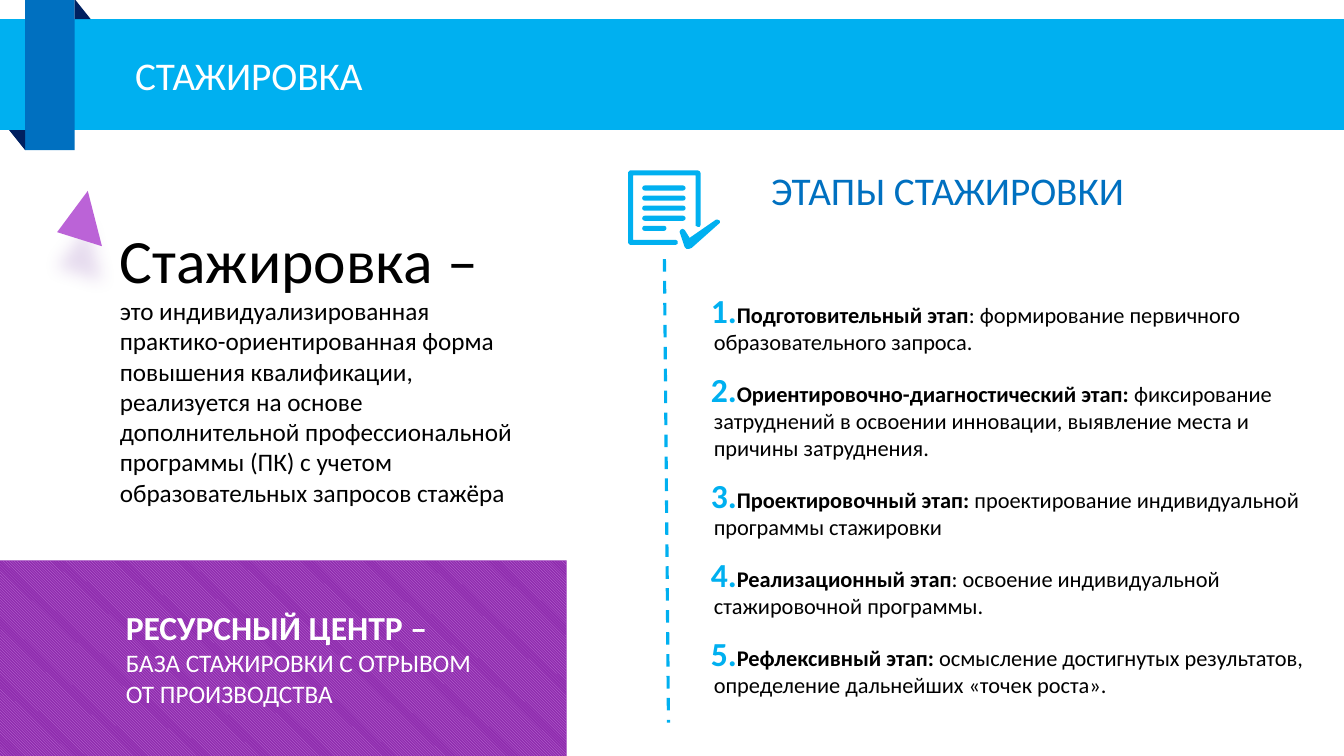
import pptx
import pptx.util
import pptx.dml.color
import pptx.enum.dml
import pptx.enum.shapes
import pptx.enum.text
import pptx.oxml
import pptx.oxml.ns
from pptx.util import Inches

SHAPE = pptx.enum.shapes.MSO_SHAPE
ANCHOR = pptx.enum.text.MSO_ANCHOR
AUTO = pptx.enum.text.MSO_AUTO_SIZE
NS = pptx.oxml.ns.nsdecls("a")

SKY, BLUE, NAVY = "00B0F0", "0070C0", "002060"
WHITE, BLACK = "FFFFFF", "000000"


def rgb(value):
    return pptx.dml.color.RGBColor.from_string(value)


def xml(text):
    return pptx.oxml.parse_xml(text)


def add_text(p, text, size=18, color=BLACK, bold=False, font="Calibri"):
    r = p.add_run()
    r.text = text
    r.font.name, r.font.size, r.font.bold = font, pptx.util.Pt(size), bold
    r.font.color.rgb = rgb(color)
    return r


class Slide:
    """Current slide and its drawing style."""

    def __init__(self, prs, layout):
        self.s = prs.slides.add_slide(prs.slide_layouts[layout])

    def paint(self, sp, fill):
        sp.shadow.inherit = False
        sp.fill.solid()
        sp.fill.fore_color.rgb = rgb(fill)
        sp.line.fill.background()
        return sp

    def shape(self, kind, x, y, w, h, fill, rot=0, adj=None):
        sp = self.s.shapes.add_shape(kind, Inches(x), Inches(y), Inches(w), Inches(h))
        sp.rotation = rot
        if adj is not None:
            sp.adjustments[0] = adj
        return self.paint(sp, fill)

    def outline(self, points, fill):
        pts = [(Inches(x), Inches(y)) for x, y in points]
        fb = self.s.shapes.build_freeform(*pts[0], scale=1.0)
        fb.add_line_segments(pts[1:], close=True)
        return self.paint(fb.convert_to_shape(), fill)

    def frame(self, sp, anchor, auto):
        tf = sp.text_frame
        tf.word_wrap, tf.vertical_anchor, tf.auto_size = True, anchor, auto
        return tf

    def text(self, x, y, w, h, lines, anchor=ANCHOR.TOP, auto=AUTO.SHAPE_TO_FIT_TEXT):
        sp = self.s.shapes.add_textbox(Inches(x), Inches(y), Inches(w), Inches(h))
        tf = self.frame(sp, anchor, auto)
        for i, (text, style) in enumerate(lines):
            p = tf.paragraphs[0] if i == 0 else tf.add_paragraph()
            add_text(p, text, **style)

    def placeholder(self, sp, x, y, w, h, anchor):
        sp.left, sp.top, sp.width, sp.height = map(Inches, (x, y, w, h))
        self.s.shapes.element.append(sp.element)  # bring to front
        return self.frame(sp, anchor, AUTO.NONE)

    def title(self, text, x, y, w, h):
        tf = self.placeholder(self.s.shapes.title, x, y, w, h, ANCHOR.MIDDLE)
        tf.margin_left = tf.margin_right = tf.margin_top = tf.margin_bottom = Inches(0.1)
        p = tf.paragraphs[0]
        p.alignment = pptx.enum.text.PP_ALIGN.LEFT
        pPr = p._p.get_or_add_pPr()
        pPr.set("marL", str(Inches(0.5)))
        pPr.set("indent", "0")
        add_text(p, text, size=28, color=WHITE)

    def numbered(self, items, x, y, w, h):
        tf = self.placeholder(self.s.placeholders[1], x, y, w, h, ANCHOR.TOP)
        for i, (name, details) in enumerate(items):
            p = tf.paragraphs[0] if i == 0 else tf.add_paragraph()
            pPr = p._p.get_or_add_pPr()
            pPr.set("marL", str(Inches(0.03)))
            pPr.set("indent", str(Inches(-0.38)))
            for bullet in (f'<a:buClr {NS}><a:srgbClr val="{SKY}"/></a:buClr>',
                           f'<a:buSzPct {NS} val="150000"/>',
                           f'<a:buFont {NS} typeface="+mj-lt"/>',
                           f'<a:buAutoNum {NS} type="arabicPeriod"/>'):
                pPr.append(xml(bullet))
            p.space_before = pptx.util.Pt(18 if i else 0)
            add_text(p, name, size=16, bold=True)
            add_text(p, details, size=16)

    def dashed(self, x1, y1, x2, y2, color, width):
        c = self.s.shapes.add_connector(pptx.enum.shapes.MSO_CONNECTOR.STRAIGHT,
                                        Inches(x1), Inches(y1), Inches(x2), Inches(y2))
        c.line.color.rgb = rgb(color)
        c.line.width = pptx.util.Pt(width)
        c.line.dash_style = pptx.enum.dml.MSO_LINE.DASH
        c._element.spPr.append(xml(f"<a:effectLst {NS}/>"))


def main():
    prs = pptx.Presentation()
    prs.slide_width, prs.slide_height = Inches(13.33), Inches(7.5)
    s = Slide(prs, 1)

    # Stages list
    s.numbered([
        ("Подготовительный этап", ": формирование первичного образовательного запроса."),
        ("Ориентировочно-диагностический этап: ",
         "фиксирование затруднений в освоении инновации, выявление места и причины затруднения."),
        ("Проектировочный этап: ", "проектирование индивидуальной программы стажировки"),
        ("Реализационный этап", ": освоение индивидуальной стажировочной программы."),
        ("Рефлексивный этап: ",
         "осмысление достигнутых результатов, определение дальнейших «точек роста»."),
    ], 6.95, 2.94, 6.32, 4.07)
    s.text(7.55, 1.6, 5.71, 0.57, [("ЭТАПЫ СТАЖИРОВКИ", dict(size=28, color=BLUE))])

    # Definition
    s.text(1.09, 2.15, 4.22, 2.96, [
        ("Стажировка –", dict(size=44)),
        ("это индивидуализированная практико-ориентированная форма повышения "
         "квалификации, реализуется на основе дополнительной профессиональной "
         "программы (ПК) с учетом образовательных запросов стажёра", {}),
    ])

    # Header band with folded ribbon
    s.shape(SHAPE.RECTANGLE, 0, 0.19, 13.33, 1.1, SKY)
    s.shape(SHAPE.RECTANGLE, 0.25, 0, 0.49, 1.49, BLUE)
    for x, y, rot in ((0.07, 1.31, 270), (0.72, 0.01, 90)):
        s.shape(SHAPE.ISOSCELES_TRIANGLE, x, y, 0.2, 0.16, NAVY, rot, adj=1)
    s.title("СТАЖИРОВКА", 0.74, 0.21, 11.91, 1.07)

    # Resource centre panel
    panel = s.shape(SHAPE.RECTANGLE, 0, 5.56, 5.62, 1.94, "8F2CAE")
    panel.fill.patterned()
    panel.fill.pattern = pptx.enum.dml.MSO_PATTERN.LIGHT_DOWNWARD_DIAGONAL
    panel.fill.fore_color.rgb = rgb("C67DDD")
    panel.fill.back_color.rgb = rgb("8F2CAE")
    s.text(1.15, 5.88, 4.08, 1.29, [
        ("РЕСУРСНЫЙ ЦЕНТР –", dict(size=24, color=WHITE, bold=True)),
        ("БАЗА СТАЖИРОВКИ С ОТРЫВОМ", dict(color=WHITE)),
        ("ОТ ПРОИЗВОДСТВА", dict(color=WHITE)),
    ], ANCHOR.MIDDLE, AUTO.NONE)

    # Accent triangle with a soft shadow below
    accent = s.shape(SHAPE.ISOSCELES_TRIANGLE, 0.64, 2.01, 0.51, 0.44, "BB63D7", 126.6, 0.7)
    accent._element.spPr.find(pptx.oxml.ns.qn("a:effectLst")).append(xml(
        f'<a:outerShdw {NS} blurRad="{pptx.util.Pt(12)}" dist="{pptx.util.Pt(25)}" '
        'dir="5400000" rotWithShape="0"><a:srgbClr val="7030A0">'
        '<a:alpha val="17000"/></a:srgbClr></a:outerShdw>'))

    # Checklist icon: tick, page, text lines
    s.outline([(7.12, 2.18), (7.14, 2.19), (7.14, 2.21), (7.13, 2.22), (6.86, 2.46),
               (6.83, 2.47), (6.81, 2.47), (6.79, 2.45), (6.74, 2.3), (6.75, 2.28),
               (6.77, 2.27), (6.79, 2.28), (6.84, 2.36), (7.1, 2.18)], SKY)
    s.outline([(6.25, 1.69), (6.92, 1.69), (6.94, 1.7), (6.95, 1.72), (6.95, 2.23),
               (6.94, 2.25), (6.92, 2.25), (6.9, 2.24), (6.9, 1.74), (6.28, 1.74),
               (6.28, 2.38), (6.7, 2.38), (6.72, 2.39), (6.72, 2.42), (6.7, 2.43),
               (6.25, 2.43), (6.23, 2.41), (6.23, 1.71)], SKY)
    for i, width in enumerate([0.43] * 4 + [0.24]):
        s.shape(SHAPE.ROUNDED_RECTANGLE, 6.37, 1.84 + 0.1 * i, width, 0.05, SKY, adj=0.5)

    # Divider
    s.dashed(6.59, 2.57, 6.63, 7.17, SKY, 2.25)

    prs.save("out.pptx")


if __name__ == "__main__":
    main()
